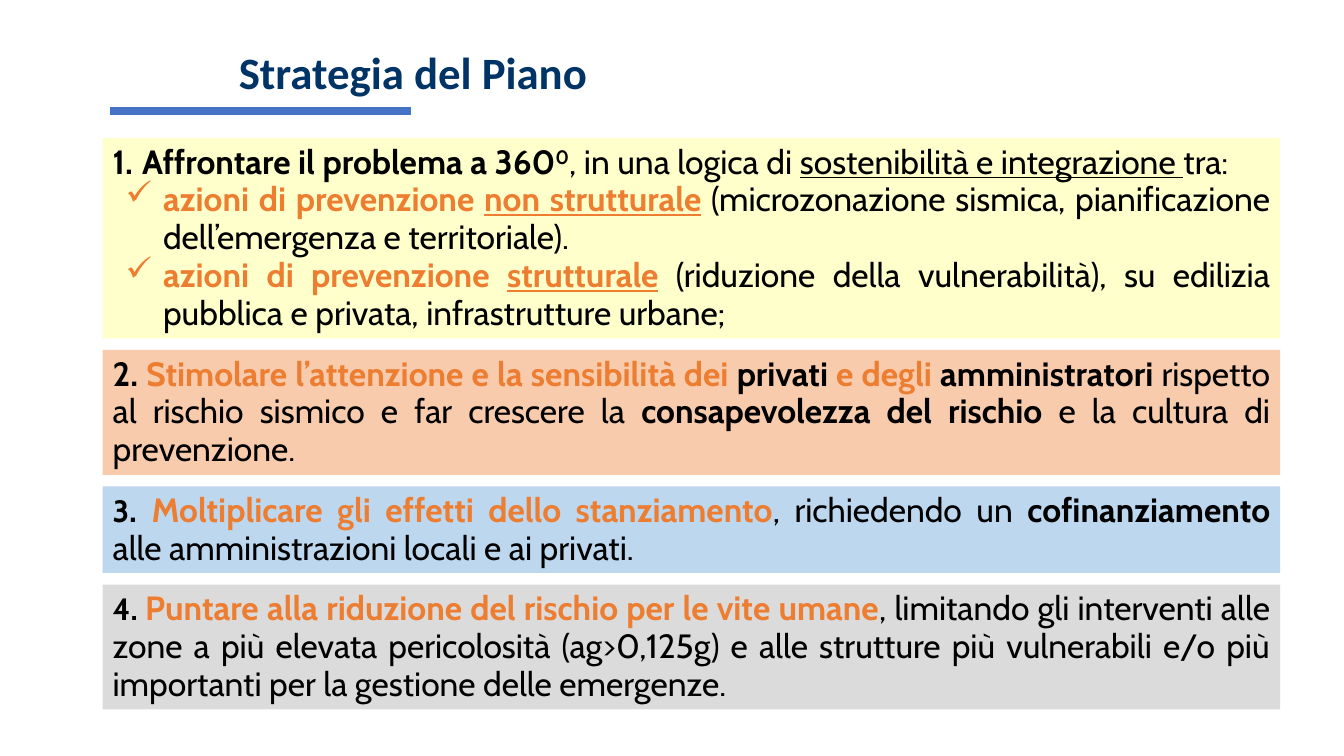
from lxml.etree import SubElement
from pptx import Presentation
from pptx.dml.color import RGBColor
from pptx.enum.shapes import MSO_CONNECTOR, MSO_SHAPE
from pptx.enum.text import MSO_ANCHOR, MSO_AUTO_SIZE, PP_ALIGN
from pptx.oxml.ns import qn
from pptx.util import Cm, Pt

BLACK = RGBColor(0x00, 0x00, 0x00)
ORANGE = RGBColor(0xED, 0x7D, 0x31)
NAVY = RGBColor(0x00, 0x33, 0x66)
BLUE = RGBColor(0x44, 0x72, 0xC4)
YELLOW = RGBColor(0xFF, 0xFF, 0xCC)
PEACH = RGBColor(0xF8, 0xCB, 0xAD)
SKY = RGBColor(0xBD, 0xD7, 0xEE)
GREY = RGBColor(0xDB, 0xDB, 0xDB)

# Bullet kind -> (element, attributes, level, left margin, hanging indent)
BULLETS = {
    "number": ("a:buAutoNum", {"type": "arabicPeriod"}, 0, Cm(0.74), Cm(0.74)),
    "check": ("a:buChar", {"char": "✓"}, 1, Cm(1.27), Cm(0.94)),
}

# Each point: fill, height in cm, paragraphs of (bullet kind, runs)
# Run styles: b bold, o orange, u underlined, s superscript, m smaller
POINTS = [
    (YELLOW, 5.05, [
        ("number", [("Affrontare il problema a 360", "b"), ("0", "bs"),
                    (", in una logica di ", ""),
                    ("sostenibilità e integrazione ", "u"), ("tra:", "")]),
        ("check", [("azioni di prevenzione ", "bo"), ("non strutturale", "bou"), (" ", "bo"),
                   ("(microzonazione sismica, pianificazione dell’emergenza e territoriale).", "")]),
        ("check", [("azioni di prevenzione ", "bo"), ("strutturale", "bou"), (" ", "bo"),
                   ("(riduzione della vulnerabilità), su edilizia pubblica e privata, "
                    "infrastrutture urbane;", "")]),
    ]),
    (PEACH, 3.15, [
        (None, [("2. ", "b"), ("Stimolare l’attenzione e la sensibilità dei ", "bo"),
                ("privati", "b"), (" e degli ", "bo"), ("amministratori ", "b"),
                ("rispetto al rischio sismico e far crescere la ", ""),
                ("consapevolezza del rischio ", "b"), ("e la cultura di prevenzione.", "")]),
    ]),
    (SKY, 2.18, [
        (None, [("3", "bm"), (". ", "b"), ("Moltiplicare gli effetti dello stanziamento", "bo"),
                (", richiedendo un ", ""), ("cofinanziamento", "b"),
                (" alle amministrazioni locali e ai privati.", "")]),
    ]),
    (GREY, 3.15, [
        (None, [("4. ", "bm"), ("Puntare alla riduzione del rischio per le vite umane", "bo"),
                (", limitando gli interventi alle zone a più elevata pericolosità (ag>0,125g) "
                 "e alle strutture più vulnerabili e/o più importanti per la gestione "
                 "delle emergenze.", "")]),
    ]),
]
POINT_GAP = 0.29


def add_styled_run(paragraph, text, style):
    run = paragraph.add_run()
    run.text = text
    run.font.bold = "b" in style
    run.font.color.rgb = ORANGE if "o" in style else BLACK
    if "u" in style:
        run.font.underline = True
    if "m" in style:
        run.font.size = Pt(22)
    if "s" in style:
        run._r.get_or_add_rPr().set("baseline", "30000")


def set_bullet(paragraph, kind):
    tag, attributes, level, margin, hanging = BULLETS[kind]
    paragraph.level = level
    properties = paragraph._p.get_or_add_pPr()
    properties.set("marL", str(margin))
    properties.set("indent", str(-hanging))
    SubElement(properties, qn(tag), attributes)


prs = Presentation()
prs.slide_width, prs.slide_height = Cm(33.87), Cm(19.05)
slide = prs.slides.add_slide(prs.slide_layouts[6])

# Four points of the strategy, stacked with an equal gap
top = 3.48
for fill, height, paragraphs in POINTS:
    point = slide.shapes.add_shape(MSO_SHAPE.RECTANGLE, Cm(2.59), Cm(top), Cm(29.67), Cm(height))
    point.shadow.inherit = False
    point.fill.solid()
    point.fill.fore_color.rgb = fill
    point.line.fill.background()
    frame = point.text_frame
    frame.word_wrap = True
    frame.auto_size = MSO_AUTO_SIZE.SHAPE_TO_FIT_TEXT
    frame.vertical_anchor = MSO_ANCHOR.TOP
    for index, (bullet, runs) in enumerate(paragraphs):
        paragraph = frame.add_paragraph() if index else frame.paragraphs[0]
        if bullet:
            set_bullet(paragraph, bullet)
        paragraph.alignment = PP_ALIGN.JUSTIFY
        paragraph.line_spacing = Pt(27)
        paragraph.font.name = "Cabin"
        paragraph.font.size = Pt(24)
        for text, style in runs:
            add_styled_run(paragraph, text, style)
    top += height + POINT_GAP

# Title
title = slide.shapes.add_textbox(Cm(5.84), Cm(1.12), Cm(19.69), Cm(1.52)).text_frame
title.word_wrap = True
title.vertical_anchor = MSO_ANCHOR.MIDDLE
title.margin_left, title.margin_right = Cm(0.18), Cm(0.76)
title.margin_top = title.margin_bottom = Cm(0.1)
heading = title.paragraphs[0]
heading.text = "Strategia del Piano"
heading.line_spacing = 0.9
heading.font.name = "Calibri"
heading.font.size = Pt(32)
heading.font.bold = True
heading.font.color.rgb = NAVY

# Rule under the title
rule = slide.shapes.add_connector(MSO_CONNECTOR.STRAIGHT, Cm(2.77), Cm(2.79), Cm(10.36), Cm(2.79))
rule.line.color.rgb = BLUE
rule.line.width = Pt(6)
SubElement(rule._element.spPr, qn("a:effectLst"))

prs.save("out.pptx")
